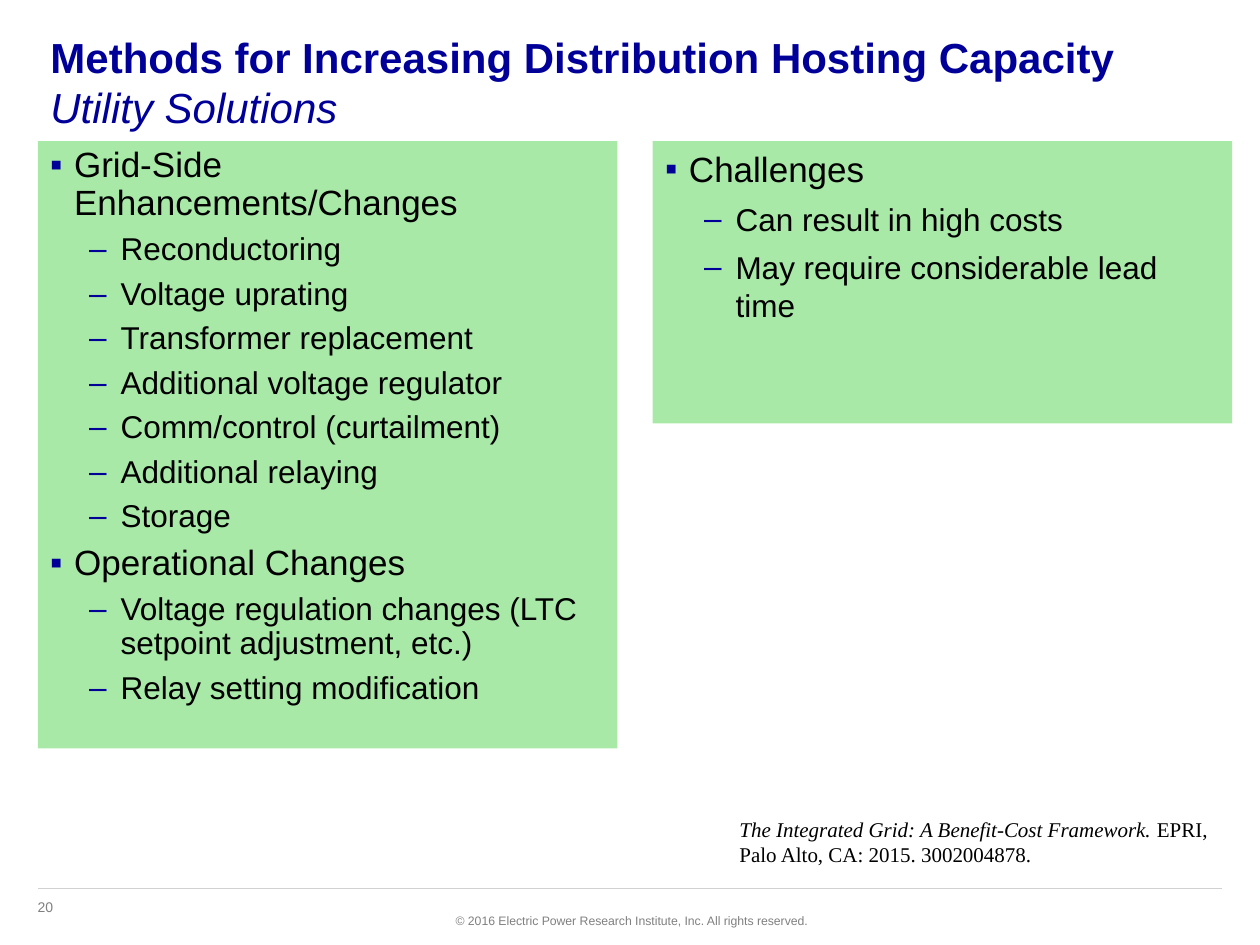
from dataclasses import dataclass

from lxml import etree
from pptx import Presentation
from pptx.dml.color import RGBColor
from pptx.enum.shapes import MSO_CONNECTOR, MSO_SHAPE
from pptx.enum.text import MSO_ANCHOR, MSO_AUTO_SIZE, PP_ALIGN
from pptx.oxml.ns import qn
from pptx.util import Inches, Pt

RECTANGLE = MSO_SHAPE.RECTANGLE
STRAIGHT = MSO_CONNECTOR.STRAIGHT
TOP = MSO_ANCHOR.TOP
NO_FIT = MSO_AUTO_SIZE.NONE
LEFT, RIGHT = PP_ALIGN.LEFT, PP_ALIGN.RIGHT


@dataclass(frozen=True)
class Theme:
    navy: str = "000099"
    black: str = "000000"
    grey: str = "808080"
    rule: str = "D1D1D1"
    panel: str = "A8E9A8"
    sans: str = "Arial"
    serif: str = "Times New Roman"
    title_size: int = 24
    source_size: int = 12
    number_size: int = 8
    copyright_size: int = 7


@dataclass(frozen=True)
class Area:
    left: float
    top: float
    width: float
    height: float

    def lengths(self) -> list:
        return [Inches(n) for n in (self.left, self.top, self.width, self.height)]


@dataclass(frozen=True)
class Level:
    size: int
    bullet: str
    margin: float
    hanging: float


@dataclass(frozen=True)
class Topic:
    heading: str
    points: tuple[str, ...]


@dataclass(frozen=True)
class Panel:
    area: Area
    topics: tuple[Topic, ...]
    line_spacing: float


THEME = Theme()
LEVELS = (Level(20, "▪", 0.19, 0.19), Level(18, "–", 0.56, 0.25))
PANEL_TOP, PANEL_WIDTH = 1.12, 4.6

PANELS = (
    Panel(
        Area(0.3, PANEL_TOP, PANEL_WIDTH, 4.82),
        (
            Topic("Grid-Side Enhancements/Changes", (
                "Reconductoring",
                "Voltage uprating",
                "Transformer replacement",
                "Additional voltage regulator",
                "Comm/control (curtailment)",
                "Additional relaying",
                "Storage",
            )),
            Topic("Operational Changes", (
                "Voltage regulation changes (LTC setpoint adjustment, etc.)",
                "Relay setting modification",
            )),
        ),
        0.9,
    ),
    Panel(
        Area(5.18, PANEL_TOP, PANEL_WIDTH, 2.24),
        (Topic("Challenges", ("Can result in high costs", "May require considerable lead time")),),
        1.0,
    ),
)


def set_all(target, values: dict) -> None:
    for name, value in values.items():
        setattr(target, name, value)


def add_span(para, text: str, size: int, color: str, face: str = THEME.sans, **styles) -> None:
    span = para.add_run()
    span.text = text
    set_all(span.font, {"name": face, "size": Pt(size), **styles})
    span.font.color.rgb = RGBColor.from_string(color)


def add_text_box(page, area: Area, wrap: bool = True, align=LEFT):
    """Add a text box and return its first paragraph."""
    frame = page.shapes.add_textbox(*area.lengths()).text_frame
    frame.word_wrap = wrap
    para = frame.paragraphs[0]
    para.alignment = align
    return para


def add_bullet(para, level: Level) -> None:
    properties = para._p.get_or_add_pPr()
    properties.set("marL", str(Inches(level.margin)))
    properties.set("indent", str(-Inches(level.hanging)))
    color = etree.SubElement(properties, qn("a:buClr"))
    etree.SubElement(color, qn("a:srgbClr"), val=THEME.navy)
    etree.SubElement(properties, qn("a:buFont"), typeface=THEME.sans)
    etree.SubElement(properties, qn("a:buChar"), char=level.bullet)


def add_panel(page, panel: Panel) -> None:
    box = page.shapes.add_shape(RECTANGLE, *panel.area.lengths())
    box.shadow.inherit = False
    box.fill.solid()
    box.fill.fore_color.rgb = RGBColor.from_string(THEME.panel)
    box.line.fill.background()
    frame = box.text_frame
    set_all(frame, {"word_wrap": True, "vertical_anchor": TOP})
    lines = [
        (depth, text)
        for topic in panel.topics
        for depth, texts in enumerate(((topic.heading,), topic.points))
        for text in texts
    ]
    for index, (depth, text) in enumerate(lines):
        para = frame.add_paragraph() if index else frame.paragraphs[0]
        add_bullet(para, LEVELS[depth])
        set_all(para, {
            "level": depth,
            "alignment": LEFT,
            "line_spacing": panel.line_spacing,
            "space_after": Pt(6),
        })
        add_span(para, text, LEVELS[depth].size, THEME.black)


def add_title(page) -> None:
    title = page.shapes.title
    set_all(title, dict(zip(("left", "top", "width", "height"), Area(0.3, 0.2, 9.4, 0.8).lengths())))
    frame = title.text_frame
    set_all(frame, {"word_wrap": True, "vertical_anchor": TOP, "auto_size": NO_FIT})
    para = frame.paragraphs[0]
    para.alignment = LEFT
    add_span(para, "Methods for Increasing Distribution Hosting Capacity",
             THEME.title_size, THEME.navy, bold=True)
    para.add_line_break()
    add_span(para, "Utility Solutions", THEME.title_size, THEME.navy, bold=False, italic=True)


def add_source(page) -> None:
    para = add_text_box(page, Area(5.77, 6.43, 4.01, 0.5))
    for text, italic in (
        ("The Integrated Grid: A Benefit-Cost Framework. ", True),
        ("EPRI, Palo Alto, CA: 2015. 3002004878.", False),
    ):
        add_span(para, text, THEME.source_size, THEME.black, THEME.serif, italic=italic)


def add_footer(page) -> None:
    rule = page.shapes.add_connector(STRAIGHT, Inches(0.3), Inches(7.05), Inches(9.7), Inches(7.05))
    rule.line.color.rgb = RGBColor.from_string(THEME.rule)
    rule.line.width = Pt(0.75)
    etree.SubElement(rule._element.spPr, qn("a:effectLst"))
    number = add_text_box(page, Area(0.2, 7.08, 0.66, 0.24))
    add_span(number, "20", THEME.number_size, THEME.grey)
    notice = add_text_box(page, Area(3.46, 7.2, 3.05, 0.22), wrap=False, align=RIGHT)
    add_span(notice, "© 2016 Electric Power Research Institute, Inc. All rights reserved.",
             THEME.copyright_size, THEME.grey)


def main() -> None:
    deck = Presentation()
    set_all(deck, {"slide_width": Inches(10), "slide_height": Inches(7.5)})
    page = deck.slides.add_slide(deck.slide_layouts.get_by_name("Title Only"))
    add_footer(page)
    add_title(page)
    for panel in PANELS:
        add_panel(page, panel)
    add_source(page)
    deck.save("out.pptx")


if __name__ == "__main__":
    main()
